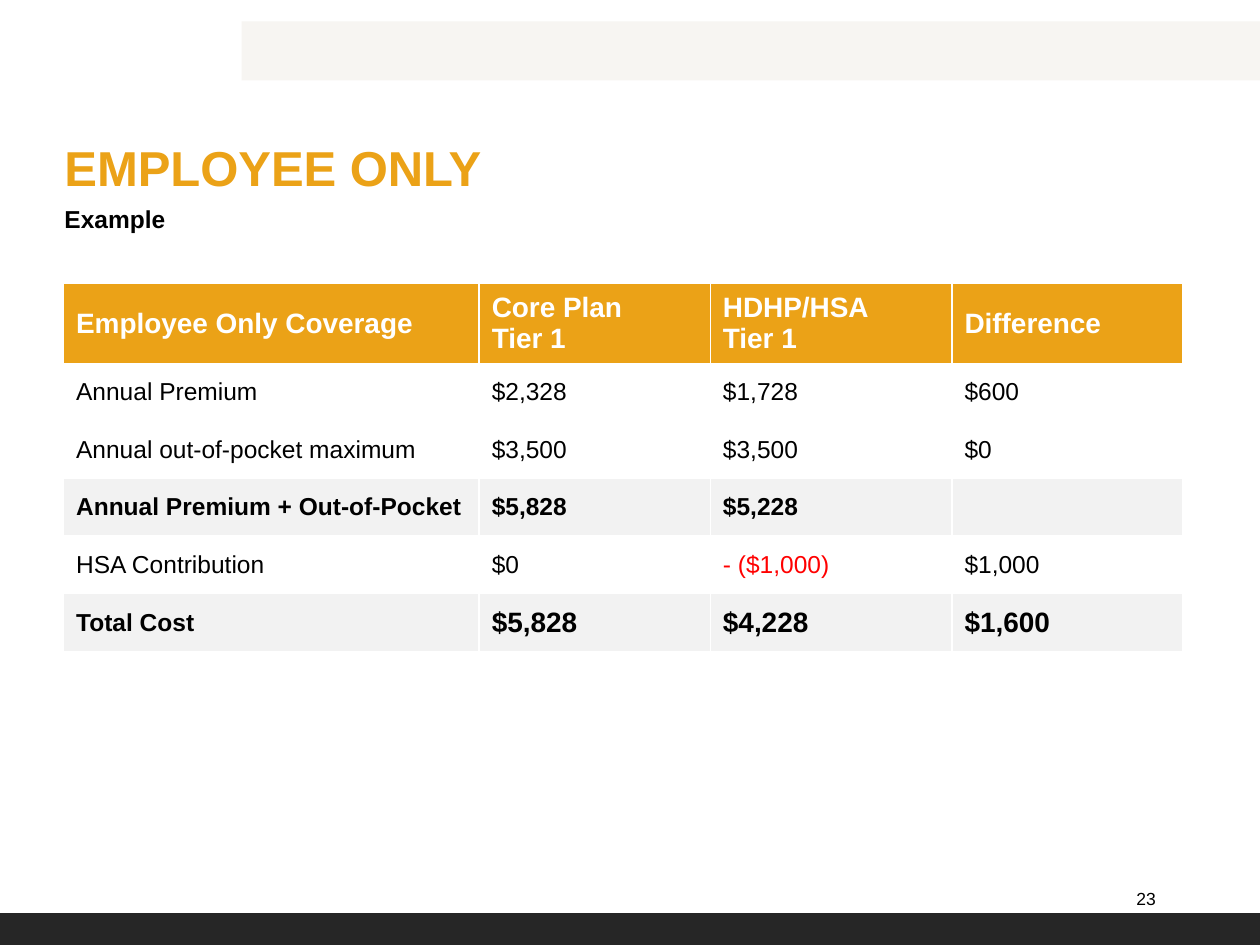
from lxml import etree
from pptx import Presentation
from pptx.dml.color import RGBColor
from pptx.enum.shapes import MSO_SHAPE
from pptx.enum.text import MSO_ANCHOR, PP_ALIGN
from pptx.oxml.ns import qn
from pptx.util import Cm, Pt

RECTANGLE = MSO_SHAPE.RECTANGLE
TOP, MIDDLE = MSO_ANCHOR.TOP, MSO_ANCHOR.MIDDLE
LEFT, RIGHT = PP_ALIGN.LEFT, PP_ALIGN.RIGHT

AMBER, BLACK, WHITE, RED = "EBA217", "000000", "FFFFFF", "FF0000"
CREAM, CHARCOAL, PALE_GRAY = "F7F5F2", "262626", "F2F2F2"

COVERAGE = [
    ["Employee Only Coverage", "Core Plan\nTier 1", "HDHP/HSA\nTier 1", "Difference"],
    ["Annual Premium", "$2,328", "$1,728", "$600"],
    ["Annual out-of-pocket maximum", "$3,500", "$3,500", "$0"],
    ["Annual Premium + Out-of-Pocket", "$5,828", "$5,228", ""],
    ["HSA Contribution", "$0", "- ($1,000)", "$1,000"],
    ["Total Cost", "$5,828", "$4,228", "$1,600"],
]
SUBTOTAL_ROW, TOTAL_ROW = 3, 5
COLUMN_WIDTHS = [8.38, 4.66, 4.87, 4.66]
HEADER_HEIGHT, ROW_HEIGHT = 1.12, 1.16


def color(hex_string):
    return RGBColor.from_string(hex_string)


def write(frame, text, size=14, ink=BLACK, bold=False, align=LEFT,
          font="Arial", spacing=None, after=None):
    """Put each line of the text in its own formatted paragraph."""
    for index, line in enumerate(text.split("\n")):
        paragraph = frame.add_paragraph() if index else frame.paragraphs[0]
        paragraph.alignment = align
        if spacing is not None:
            paragraph.line_spacing = spacing
        if after is not None:
            paragraph.space_after = Pt(after)
        paragraph.font.size = Pt(size)
        if line:
            run = paragraph.add_run()
            run.text = line
            run.font.name = font
            run.font.size = Pt(size)
            run.font.bold = bold
            run.font.color.rgb = color(ink)


def cell_format(row, column, text):
    """Return the fill and the text format of a coverage cell."""
    if row == 0:
        return AMBER, dict(size=16, ink=WHITE, bold=True)
    summary = row in (SUBTOTAL_ROW, TOTAL_ROW)
    size = 16 if row == TOTAL_ROW and column else 14
    ink = RED if text.startswith("-") else BLACK
    return PALE_GRAY if summary else WHITE, dict(size=size, ink=ink, bold=summary)


class SlideBuilder:
    def __init__(self, slide, border=WHITE, border_width=1):
        self.slide = slide
        self.border = border
        self.border_width = border_width

    def band(self, left, top, width, height, fill):
        band = self.slide.shapes.add_shape(
            RECTANGLE, Cm(left), Cm(top), Cm(width), Cm(height))
        band.shadow.inherit = False
        band.fill.solid()
        band.fill.fore_color.rgb = color(fill)
        band.line.fill.background()

    def text(self, left, top, width, height, text, anchor=TOP,
             right_inset=0, **text_format):
        box = self.slide.shapes.add_textbox(
            Cm(left), Cm(top), Cm(width), Cm(height))
        frame = box.text_frame
        frame.word_wrap = True
        frame.vertical_anchor = anchor
        frame.margin_left = frame.margin_top = frame.margin_bottom = 0
        frame.margin_right = Cm(right_inset)
        write(frame, text, **text_format)

    def outline(self, cell):
        properties = cell._tc.get_or_add_tcPr()
        for index, side in enumerate(("a:lnL", "a:lnR", "a:lnT", "a:lnB")):
            line = etree.Element(qn(side), w=str(Pt(self.border_width)))
            fill = etree.SubElement(line, qn("a:solidFill"))
            etree.SubElement(fill, qn("a:srgbClr"), val=self.border)
            properties.insert(index, line)

    def table(self, left, top, rows, widths, header_height, row_height):
        heights = [header_height] + [row_height] * (len(rows) - 1)
        table = self.slide.shapes.add_table(
            len(rows), len(widths), Cm(left), Cm(top),
            Cm(sum(widths)), Cm(sum(heights))).table
        table.horz_banding = False
        for column, width in zip(table.columns, widths):
            column.width = Cm(width)
        for row, height in zip(table.rows, heights):
            row.height = Cm(height)
        for r, values in enumerate(rows):
            for c, value in enumerate(values):
                cell = table.cell(r, c)
                fill, text_format = cell_format(r, c, value)
                cell.vertical_anchor = MIDDLE
                cell.fill.solid()
                cell.fill.fore_color.rgb = color(fill)
                self.outline(cell)
                write(cell.text_frame, value, **text_format)


def main():
    deck = Presentation()
    deck.slide_width, deck.slide_height = Cm(25.4), Cm(19.05)
    builder = SlideBuilder(deck.slides.add_slide(deck.slide_layouts[6]))

    # Top band
    builder.band(4.87, 0.43, 20.53, 1.19, CREAM)

    # Heading
    builder.text(1.3, 4.04, 22.35, 0.84, "Example", bold=True,
                 spacing=1.14, after=6)
    builder.text(1.3, 2.74, 22.35, 1.27, "EMPLOYEE ONLY", anchor=MIDDLE,
                 size=28, ink=AMBER, bold=True)

    # Footer
    builder.band(0, 18.41, 25.4, 0.64, CHARCOAL)
    builder.text(22.71, 17.6, 0.84, 1.02, "23", anchor=MIDDLE,
                 right_inset=0.25, size=10, align=RIGHT)

    # Cost comparison
    builder.table(1.28, 5.72, COVERAGE, COLUMN_WIDTHS, HEADER_HEIGHT, ROW_HEIGHT)

    deck.save("out.pptx")


if __name__ == "__main__":
    main()
